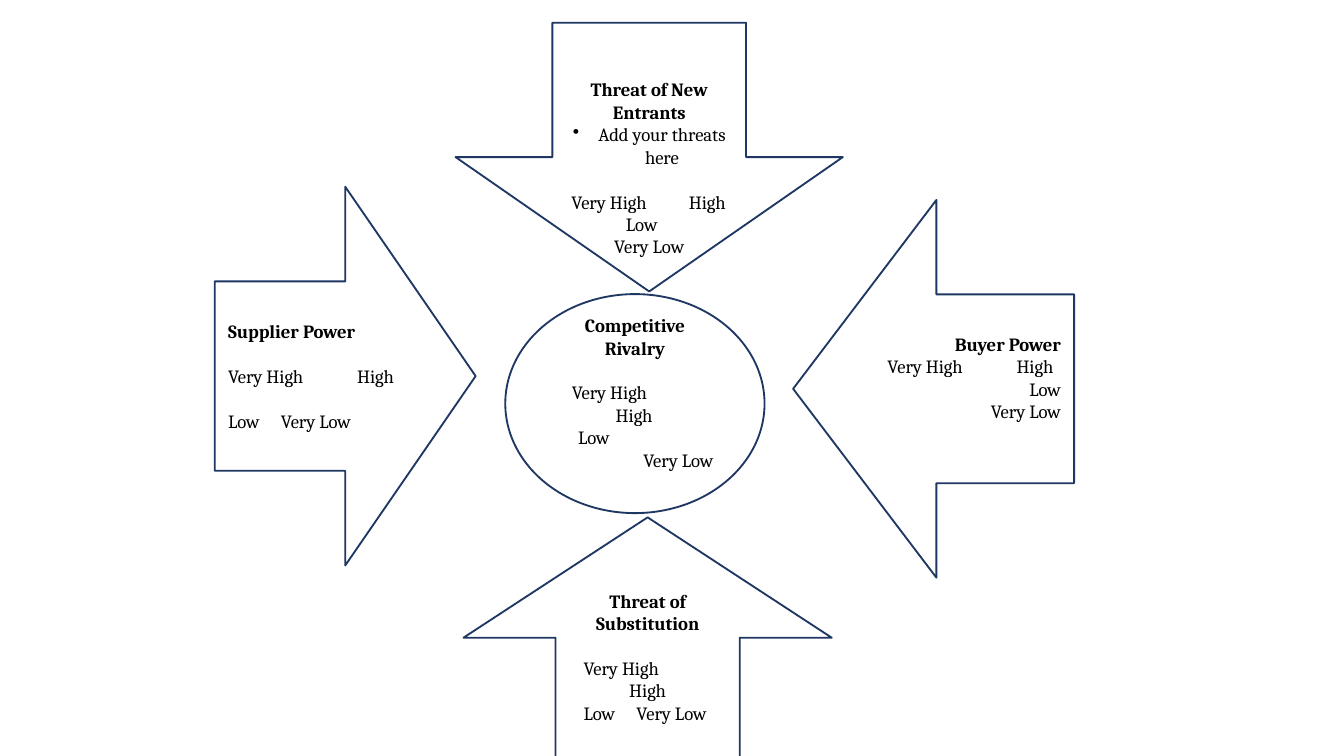
from dataclasses import dataclass

from lxml import etree
from pptx import Presentation
from pptx import util as u
from pptx.dml.color import RGBColor
from pptx.enum import shapes, text
from pptx.oxml.ns import qn

NAVY = RGBColor(0x1F, 0x37, 0x63)
BLACK = RGBColor(0, 0, 0)
FONT = "Cambria"
LINE_HEIGHT = 0.42  # cm, one line of 10 pt text
INSET = 0.25  # cm

LEFT, CENTER, RIGHT = text.PP_ALIGN.LEFT, text.PP_ALIGN.CENTER, text.PP_ALIGN.RIGHT


@dataclass
class Line:
    """One paragraph; lengths in cm, gap in points."""
    words: str
    align: object = CENTER
    bold: bool = False
    gap: int = 0
    indent: float = 0
    tab: float = 0
    bullet: bool = False


def add_bullet(properties, hanging):
    properties.set("marL", str(u.Cm(hanging)))
    properties.set("indent", str(-u.Cm(hanging)))
    etree.SubElement(properties, qn("a:buChar")).set("char", "•")


def add_tab_stop(properties, position):
    stops = etree.SubElement(properties, qn("a:tabLst"))
    stop = etree.SubElement(stops, qn("a:tab"))
    stop.set("pos", str(u.Cm(position)))
    stop.set("algn", "l")


def write_line(paragraph, line):
    paragraph.text = line.words
    paragraph.alignment = line.align
    paragraph.space_before = u.Pt(line.gap)
    properties = paragraph._p.get_or_add_pPr()
    if line.indent:
        properties.set("marL", str(u.Cm(line.indent)))
    if line.bullet:
        add_bullet(properties, 0.48)
    if line.tab:
        add_tab_stop(properties, line.tab)
    for run in paragraph.runs:
        run.font.name = FONT
        run.font.size = u.Pt(10)
        run.font.bold = line.bold
        run.font.color.rgb = BLACK


def add_force(slide, kind, box, lines, left=INSET, right=INSET, above=0, below=0):
    """Outlined shape with text; above and below reserve whole text lines."""
    shape = slide.shapes.add_shape(kind, *(u.Cm(length) for length in box))
    shape.shadow.inherit = False
    shape.fill.background()
    shape.line.color.rgb = NAVY
    shape.line.width = u.Pt(1)

    frame = shape.text_frame
    frame.word_wrap = True
    frame.vertical_anchor = text.MSO_ANCHOR.MIDDLE
    frame.margin_left, frame.margin_right = u.Cm(left), u.Cm(right)
    frame.margin_top = u.Cm(above * LINE_HEIGHT)
    frame.margin_bottom = u.Cm(below * LINE_HEIGHT)
    for index, line in enumerate(lines):
        paragraph = frame.add_paragraph() if index else frame.paragraphs[0]
        write_line(paragraph, line)
    return shape


def main():
    presentation = Presentation()
    presentation.slide_width, presentation.slide_height = u.Cm(25.4), u.Cm(14.29)
    slide = presentation.slides.add_slide(presentation.slide_layouts[6])
    kinds = shapes.MSO_SHAPE

    # Substitution, from below
    add_force(slide, kinds.UP_ARROW, (8.76, 9.78, 6.96, 4.55), [
        Line("Threat of Substitution", bold=True),
        Line("Very High", LEFT, gap=12),
        Line("High"),
        Line("Low\tVery Low", LEFT, tab=1),
    ], left=0.53, right=0.53, below=1)

    # New entrants, from above
    add_force(slide, kinds.DOWN_ARROW, (8.61, 0.43, 7.32, 5.08), [
        Line("Threat of New Entrants", bold=True),
        Line("Add your threats here", bullet=True),
        Line("Very High\tHigh", LEFT, gap=12, tab=2.22),
        Line("Low", LEFT, indent=1.03),
        Line("Very Low"),
    ], left=0.36, right=0.36, above=4)

    # Buyers, from the right
    buyer = add_force(slide, kinds.LEFT_ARROW, (14.99, 3.78, 5.31, 7.14), [
        Line("Buyer Power", RIGHT, bold=True),
        Line("Very High\tHigh", LEFT, tab=2.44),
        Line("Low", RIGHT),
        Line("Very Low", RIGHT),
    ], left=0.43, below=1)
    buyer.adjustments[1] = 0.51

    # Suppliers, from the left
    add_force(slide, kinds.RIGHT_ARROW, (4.06, 3.53, 4.93, 7.16), [
        Line("Supplier Power", LEFT, bold=True),
        Line("Very High\tHigh", LEFT, gap=12, tab=2.44),
        Line("Low\tVery Low", LEFT, gap=12, tab=1),
    ])

    # Rivalry in the centre
    add_force(slide, kinds.OVAL, (9.55, 5.56, 4.9, 4.14), [
        Line("Competitive Rivalry", bold=True),
        Line("Very High", LEFT, gap=12, indent=0.29),
        Line("High", LEFT, indent=1.12),
        Line("Low", LEFT, indent=0.41),
        Line("Very Low", RIGHT),
    ], below=1)

    presentation.save("out.pptx")


if __name__ == "__main__":
    main()
